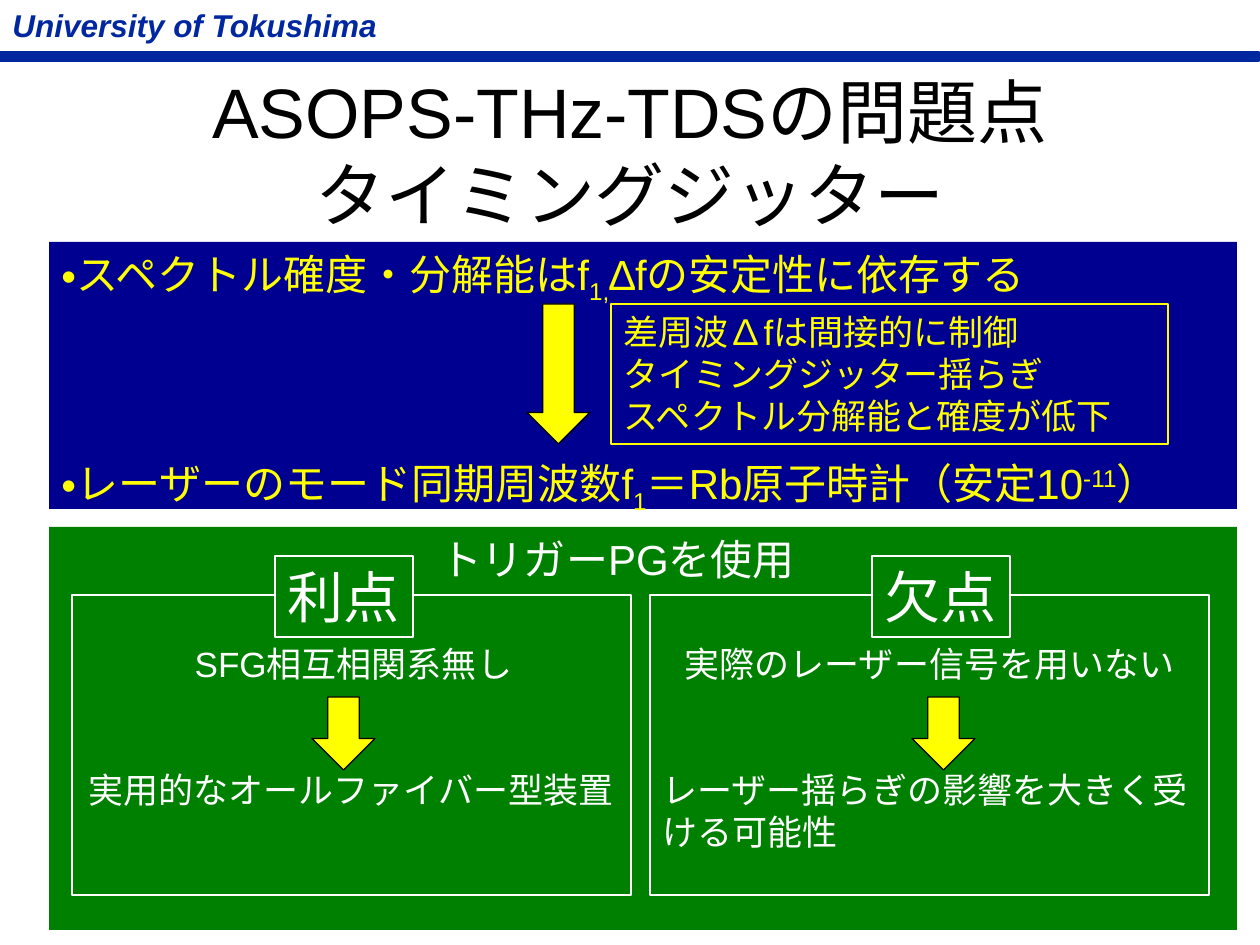
"""Build the slide on timing jitter in ASOPS-THz-TDS."""
from lxml.etree import SubElement as Sub
from pptx import Presentation
from pptx.dml.color import RGBColor
from pptx.enum.shapes import MSO_SHAPE as Kind
from pptx.enum.text import MSO_ANCHOR as Anchor, PP_ALIGN as Align
from pptx.oxml.ns import qn
from pptx.util import Pt

PX = 914400 / 126
NAVY, BLUE, GREEN = "00279F", "000090", "008000"
YELLOW, WHITE, BLACK = "FFFF00", "FFFFFF", "000000"
hue = RGBColor.from_string


def box(kind, area, fill=None, line=None):
    """Add a preset shape with optional fill and line."""
    shape = slide.shapes.add_shape(kind, *[round(n * PX) for n in area])
    shape.shadow.inherit = False
    if fill:
        shape.fill.solid()
        shape.fill.fore_color.rgb = hue(fill)
    else:
        shape.fill.background()
    if line:
        shape.line.color.rgb = hue(line)
        shape.line.width = Pt(0.75)
    else:
        shape.line.fill.background()
    return shape


def write(shape, lines, size, color, wrap=True):
    """Fill a shape with (align, space before, runs) lines."""
    frame = shape.text_frame
    frame.word_wrap = wrap
    frame.vertical_anchor = Anchor.TOP
    for i, (align, gap, runs) in enumerate(lines):
        para = frame.paragraphs[0] if i == 0 else frame.add_paragraph()
        para.alignment = align
        if gap:
            para.space_before = Pt(gap)
        for text, base in runs:
            run = para.add_run()
            run.text = text
            run.font.name = "Arial"
            run.font.size = Pt(size)
            run.font.color.rgb = hue(color)
            if base:
                run._r.get_or_add_rPr().set("baseline", str(base * 1000))
    return frame


deck = Presentation()
deck.slide_width, deck.slide_height = round(1260 * PX), round(945 * PX)
slide = deck.slides.add_slide(deck.slide_layouts[5])

box(Kind.RECTANGLE, (0, 52, 1259, 9), NAVY, NAVY)
head = slide.shapes.add_textbox(0, 0, round(393 * PX), round(50 * PX))
frame = write(head, [(Align.LEFT, 0, [("University of Tokushima", 0)])], 18, NAVY, False)
font = frame.paragraphs[0].runs[0].font
font.bold = font.italic = True

title = slide.shapes.title
title.left, title.top, title.width, title.height = [round(n * PX) for n in (0, 62, 1260, 180)]
title.text_frame.text = "ASOPS-THz-TDSの問題点\vタイミングジッター"
title.text_frame.vertical_anchor = Anchor.MIDDLE
para = title.text_frame.paragraphs[0]
para.alignment = Align.CENTER
for run in para.runs:
    run.font.name = "Arial"
    run.font.size = Pt(40)
    run.font.color.rgb = hue(BLACK)

top = box(Kind.RECTANGLE, (49, 242, 1188, 267), BLUE)
frame = write(top, [
    (Align.LEFT, 0, [("スペクトル確度•分解能はf", 0), ("1,", -25), ("∆fの安定性に依存する", 0)]),
    (Align.LEFT, 87, [("レーザーのモード同期周波数f", 0), ("1", -25),
                      ("＝Rb原子時計（安定10", 0), ("-11", 30), ("）", 0)]),
], 24, YELLOW)
for para in frame.paragraphs:
    props = para._p.get_or_add_pPr()
    props.set("marL", str(round(15 * PX)))
    props.set("indent", str(round(-15 * PX)))
    Sub(props, qn("a:buFont")).set("typeface", "Arial")
    Sub(props, qn("a:buChar")).set("char", "•")

note = box(Kind.RECTANGLE, (611, 304, 557, 140), None, YELLOW)
facts = ["差周波∆fは間接的に制御", "タイミングジッター揺らぎ", "スペクトル分解能と確度が低下"]
write(note, [(Align.JUSTIFY, 0, [(fact, 0)]) for fact in facts], 20, YELLOW)
box(Kind.DOWN_ARROW, (527, 304, 63, 140), YELLOW, BLACK)

base = box(Kind.RECTANGLE, (49, 527, 1188, 403), GREEN)
frame = write(base, [(Align.LEFT, 0, [("トリガーPGを使用", 0)])], 24, WHITE)
frame.margin_left = round(391 * PX)

sides = [
    (72, 275, 312, 76, False, "利点", "SFG相互相関系無し", "実用的なオールファイバー型装置"),
    (650, 872, 912, 650, True, "欠点", "実際のレーザー信号を用いない",
     "レーザー揺らぎの影響を大きく受ける可能性"),
]
for left, tab, tip, edge, wrap, name, cause, result in sides:
    box(Kind.RECTANGLE, (left, 595, 559, 300), None, WHITE)
    label = box(Kind.RECTANGLE, (tab, 556, 138, 81), GREEN, WHITE)
    write(label, [(Align.LEFT, 0, [(name, 0)])], 32, WHITE, False)
    body = slide.shapes.add_textbox(*[round(n * PX) for n in (edge, 636, left + 559 - edge, 224)])
    write(body, [(Align.CENTER, 0, [(cause, 0)]), (Align.LEFT, 48, [(result, 0)])],
          20, WHITE, wrap)
    box(Kind.DOWN_ARROW, (tip, 697, 63, 73), YELLOW, BLACK)

deck.save("out.pptx")
